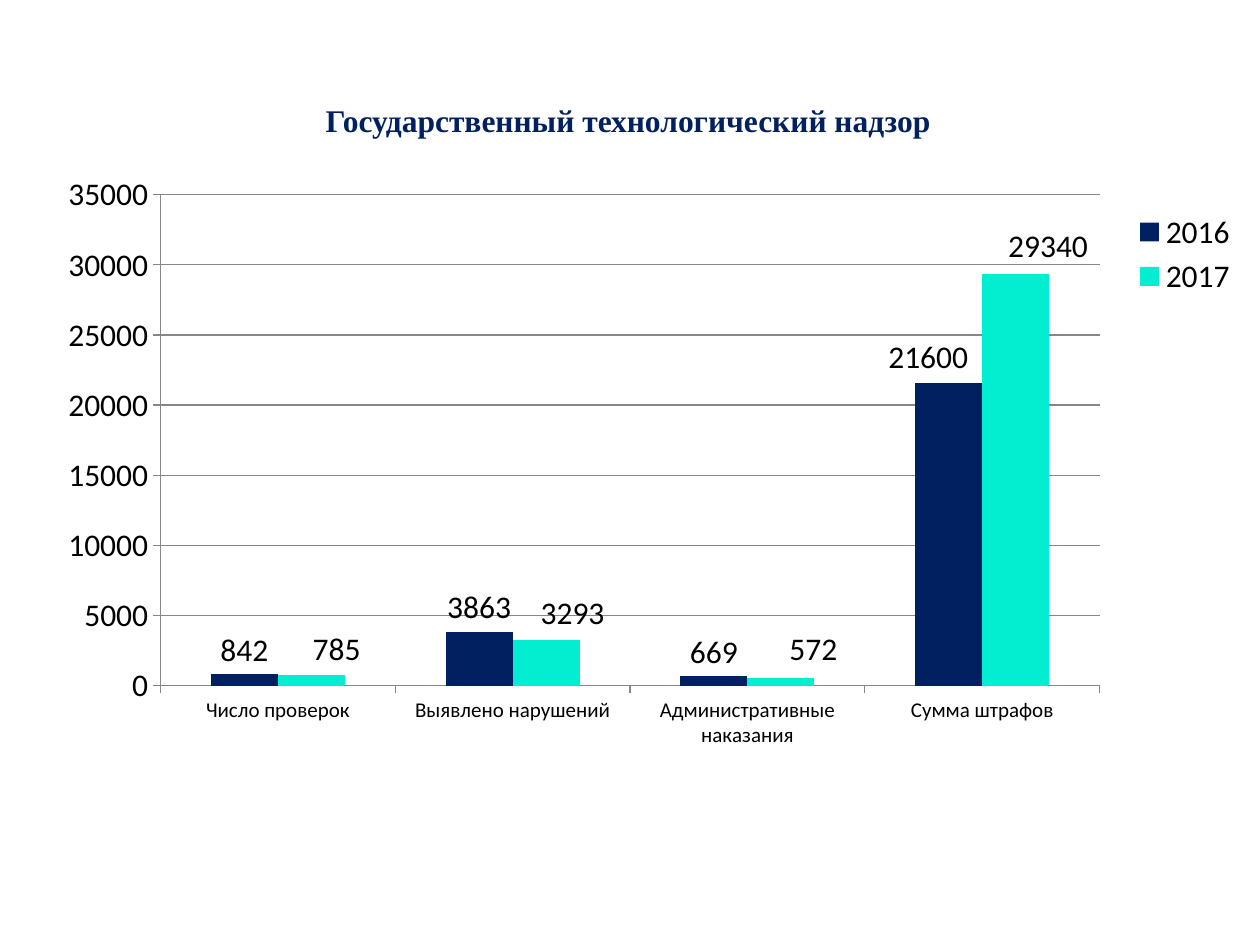
from lxml import etree
from pptx import Presentation
from pptx.chart import data as d
from pptx.dml.color import RGBColor
from pptx.enum import chart as c, text as t
from pptx.oxml import ns
from pptx.util import Pt


def color(value):
    return RGBColor.from_string(value)


def format_font(font, *, size, name="Calibri", fill="000000", bold=False):
    font.size, font.name, font.bold = Pt(size), name, bold
    font.color.rgb = color(fill)


def add_text(para, text, **style):
    span = para.add_run()
    span.text = text
    format_font(span.font, **style)


def manual_layout(parent, position, **values):
    """Place a chart part by fractions of the chart area."""
    for old in parent.findall(ns.qn("c:layout")):
        parent.remove(old)
    layout = etree.Element(ns.qn("c:layout"))
    manual = etree.SubElement(layout, ns.qn("c:manualLayout"))
    for key, value in values.items():
        etree.SubElement(manual, ns.qn("c:" + key)).set("val", str(value))
    parent.insert(position, layout)


class Slide:
    navy, mint, grid = "002060", "03EDD1", "878787"

    def __init__(self, deck):
        self.page = deck.slides.add_slide(deck.slide_layouts[6])

    def title(self, text, left, top, width, height):
        box = self.page.shapes.add_textbox(Pt(left), Pt(top), Pt(width), Pt(height))
        frame = box.text_frame
        frame.word_wrap = True
        frame.vertical_anchor = t.MSO_ANCHOR.MIDDLE
        para = frame.paragraphs[0]
        para.alignment = t.PP_ALIGN.CENTER
        para.line_spacing = 0.9
        add_text(para, text, size=18, name="Times New Roman", fill=self.navy, bold=True)

    def columns(self, categories, series, left, top, width, height):
        table = d.CategoryChartData()
        table.categories = categories
        for name, values in series.items():
            table.add_series(name, values)
        chart = self.page.shapes.add_chart(
            c.XL_CHART_TYPE.COLUMN_CLUSTERED,
            Pt(left), Pt(top), Pt(width), Pt(height), table).chart
        format_font(chart.font, size=18)
        chart.has_title = False

        # Columns and their labels
        plot = chart.plots[0]
        plot.gap_width, plot.overlap, plot.vary_by_categories = 150, 0, False
        for item, fill in zip(plot.series, (self.navy, self.mint)):
            item.format.fill.solid()
            item.format.fill.fore_color.rgb = color(fill)
            labels = item.data_labels
            labels.show_value = True
            labels.position = c.XL_LABEL_POSITION.OUTSIDE_END
            format_font(labels.font, size=18)

        # Axes
        for axis, size in ((chart.category_axis, 12), (chart.value_axis, 18)):
            format_font(axis.tick_labels.font, size=size)
            axis.major_tick_mark = c.XL_TICK_MARK.OUTSIDE
            axis.format.line.color.rgb = color(self.grid)
        axis.minimum_scale, axis.maximum_scale, axis.major_unit = 0, 35000, 5000
        axis.major_gridlines.format.line.color.rgb = color(self.grid)

        # Legend and plot area
        chart.has_legend = True
        chart.legend.position = c.XL_LEGEND_POSITION.RIGHT
        chart.legend.include_in_layout = False
        format_font(chart.legend.font, size=18)
        edges = dict(xMode="edge", yMode="edge")
        area = plot.series[0]._element.getparent().getparent()
        manual_layout(area, 0, layoutTarget="inner", **edges, x=0.097, y=0.05, w=0.782, h=0.826)
        legend = area.getparent().find(ns.qn("c:legend"))
        manual_layout(legend, 1, **edges, x=0.9, y=0.07, w=0.1, h=0.16)
        return plot

    def shift_label(self, series, index, x, y):
        label = series.points[index].data_label
        label.position = c.XL_LABEL_POSITION.OUTSIDE_END
        format_font(label.font, size=18)
        for node in series._element.iter(ns.qn("c:dLbl")):
            if node.find(ns.qn("c:idx")).get("val") == str(index):
                manual_layout(node, 1, x=x, y=y)


def main():
    deck = Presentation()
    deck.slide_width, deck.slide_height = Pt(720), Pt(540)
    slide = Slide(deck)
    slide.title("Государственный технологический надзор", 52, 57, 614, 26)
    plot = slide.columns(
        ["Число проверок", "Выявлено нарушений", "Административные наказания", "Сумма штрафов"],
        {"2016": (842, 3863, 669, 21600), "2017": (785, 3293, 572, 29340)},
        25.2, 94.3, 686.2, 339.8)

    # Labels moved clear of their neighbours: series, point, x, y
    for row, index, x, y in ((0, 3, -0.017, -0.003), (1, 0, 0.021, -0.003), (1, 1, 0.022, -0.003),
                             (1, 2, 0.027, -0.007), (1, 3, 0.027, -0.007)):
        slide.shift_label(plot.series[row], index, x, y)
    deck.save("out.pptx")


if __name__ == "__main__":
    main()
